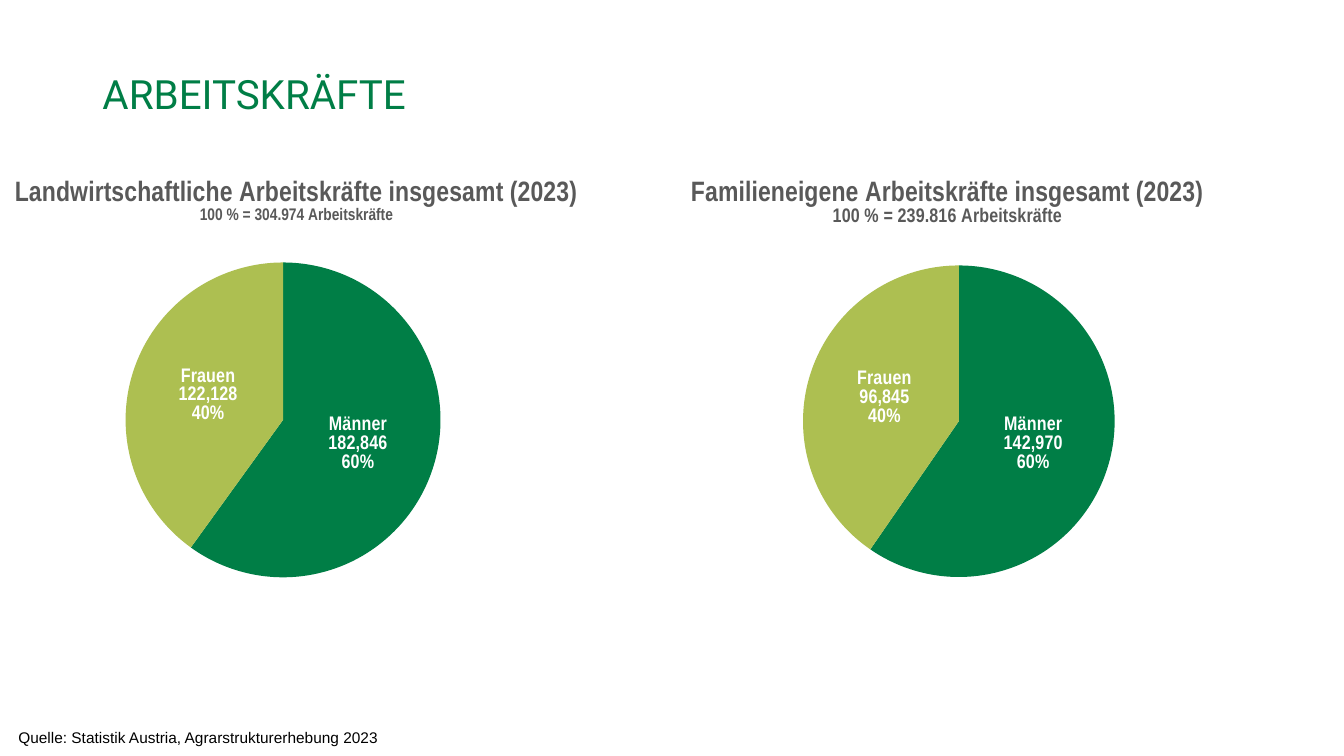
from dataclasses import dataclass

from pptx import Presentation
from pptx.chart.data import CategoryChartData
from pptx.dml.color import RGBColor
from pptx.enum.chart import XL_CHART_TYPE, XL_LABEL_POSITION
from pptx.enum.text import MSO_ANCHOR, PP_ALIGN
from pptx.oxml import parse_xml
from pptx.oxml.ns import nsdecls
from pptx.util import Inches, Pt


@dataclass(frozen=True)
class Theme:
    """Colours, fonts and type sizes."""
    green: str = "007E46"
    lime: str = "ADBF51"
    grey: str = "595959"
    white: str = "FFFFFF"
    black: str = "000000"
    heading: str = "Roboto"
    body: str = "Arial"
    narrow: str = "Arial Narrow"
    title: float = 28.8
    chart_title: int = 20
    label: int = 14
    source: int = 11


def layout_xml(target="", **shares):
    """Return a manual chart layout made of shares of the chart's size."""
    inner = '<c:layoutTarget val="inner"/>' if target else ""
    modes = '<c:xMode val="edge"/><c:yMode val="edge"/>'
    sizes = "".join(f'<c:{k} val="{v:.4f}"/>' for k, v in shares.items())
    return parse_xml(f'<c:layout {nsdecls("c")}><c:manualLayout>{inner}{modes}'
                     f'{sizes}</c:manualLayout></c:layout>')


def drop_layout(element):
    """Remove the automatic layout of a chart part."""
    for old in element.findall("{*}layout"):
        element.remove(old)


class Deck:
    """Draws on the current slide, on a grid of 160 columns and 90 rows."""
    COLS, ROWS = 160, 90

    def __init__(self, theme):
        """Start a presentation with one title-only slide."""
        self.theme = theme
        self.prs = Presentation()
        self.prs.slide_width, self.prs.slide_height = Inches(13.33), Inches(7.5)
        self.s = self.prs.slides.add_slide(self.prs.slide_layouts[5])

    def box(self, x, y, w, h):
        """Turn grid columns and rows into lengths."""
        col, row = self.prs.slide_width / self.COLS, self.prs.slide_height / self.ROWS
        return int(x * col), int(y * row), int(w * col), int(h * row)

    def style(self, font, name, size, color, bold=False):
        """Format a font."""
        font.name, font.size, font.bold = name, Pt(size), bold
        font.color.rgb = RGBColor.from_string(color)

    def title(self, text, *cells):
        """Fill and place the slide title."""
        sp = self.s.shapes.title
        sp.left, sp.top, sp.width, sp.height = self.box(*cells)
        tf = sp.text_frame
        tf.text = text
        tf.vertical_anchor = MSO_ANCHOR.MIDDLE
        p = tf.paragraphs[0]
        p.alignment, p.line_spacing = PP_ALIGN.LEFT, 0.8
        self.style(p.runs[0].font, self.theme.heading, self.theme.title, self.theme.green)

    def source(self, text, *cells):
        """Add the source line."""
        tf = self.s.shapes.add_textbox(*self.box(*cells)).text_frame
        tf.word_wrap = False
        tf.text = text
        self.style(tf.paragraphs[0].runs[0].font, self.theme.body,
                   self.theme.source, self.theme.black)

    def pie(self, cells, title, subtitle, sub_size, title_at, pie_at, values):
        """Add a two-part pie with its title and labels."""
        t = self.theme
        x, y, w, h = cells
        data = CategoryChartData(number_format="#,##0")
        data.categories = ["Männer", "Frauen"]
        data.add_series("Arbeitskräfte", values)
        chart = self.s.shapes.add_chart(XL_CHART_TYPE.PIE, *self.box(*cells), data).chart
        self.style(chart.font, t.body, 10, t.black)
        chart.has_legend = False

        tf = chart.chart_title.text_frame
        tf.text = f"{title}\n{subtitle}"
        for p, size in zip(tf.paragraphs, (t.chart_title, sub_size)):
            self.style(p.runs[0].font, t.narrow, size, t.grey, True)
        heading = chart.chart_title._element
        drop_layout(heading)
        heading.tx.addnext(layout_xml(x=(title_at[0] - x) / w, y=(title_at[1] - y) / h))

        px, py, size = pie_at
        area = chart._chartSpace.chart.plotArea
        drop_layout(area)
        area.insert(0, layout_xml("inner", x=(px - size / 2 - x) / w,
                                  y=(py - y) / h, w=size / w, h=size / h))

        plot = chart.plots[0]
        plot.vary_by_categories = True
        for i, color in enumerate((t.green, t.lime)):
            fmt = plot.series[0].points[i].format
            fmt.fill.solid()
            fmt.fill.fore_color.rgb = RGBColor.from_string(color)
            fmt.line.fill.background()

        labels = plot.series[0].data_labels
        labels.show_category_name = labels.show_value = labels.show_percentage = True
        labels.number_format, labels.number_format_is_linked = "0%", False
        labels.position = XL_LABEL_POSITION.CENTER
        self.style(labels.font, t.narrow, t.label, t.white, True)
        labels._element.find("{*}showBubbleSize").addnext(
            parse_xml(f'<c:separator {nsdecls("c")}>\n</c:separator>'))


def main():
    """Build the slide."""
    deck = Deck(Theme())
    deck.title("ARBEITSKRÄFTE", 11, 8.7, 120, 5.9)
    deck.pie((0, 20, 88, 51), "Landwirtschaftliche Arbeitskräfte insgesamt (2023)",
             "100 % = 304.974 Arbeitskräfte", 12, (1.4, 20.9), (33.7, 31.25, 37.5),
             (182846, 122128))
    deck.pie((72, 20, 88, 51), "Familieneigene Arbeitskräfte insgesamt (2023)",
             "100 % = 239.816 Arbeitskräfte", 14, (81.9, 20.9), (114.15, 31.6, 37.1),
             (142970, 96845))
    deck.source("Quelle: Statistik Austria, Agrarstrukturerhebung 2023", 1, 86.1, 47.8, 3.5)
    deck.prs.save("out.pptx")


if __name__ == "__main__":
    main()
